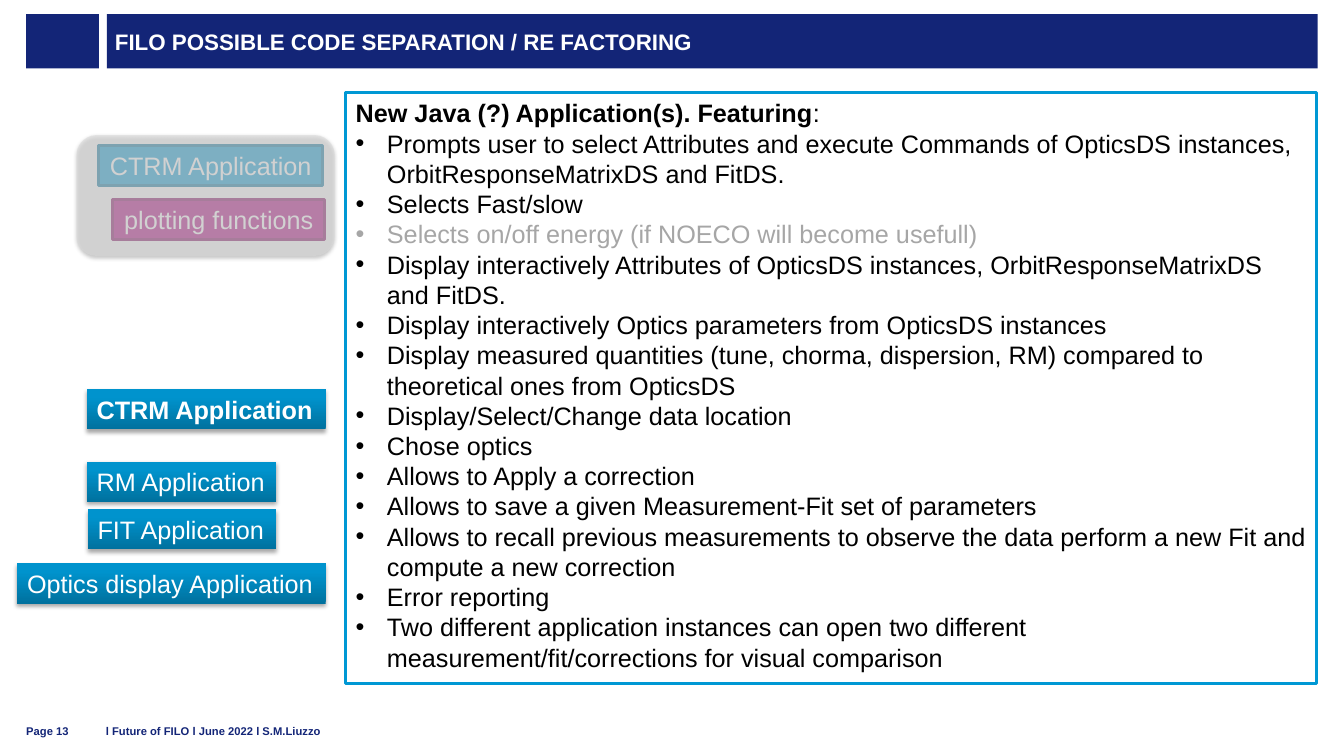
from pptx import Presentation
from pptx.dml.color import RGBColor
from pptx.enum import shapes, text
from pptx.oxml import parse_xml
from pptx.oxml.ns import nsdecls, qn
from pptx.util import Inches, Pt

NAVY, BLUE, WHITE, BLACK, GREY = "132577", "0098D4", "FFFFFF", "000000", "A6A6A6"
BUTTON_STOPS = [(0, "00719E"), (80, "0093CD"), (100, "0094CE")]

FEATURES = [
    "Prompts user to select Attributes and execute Commands of OpticsDS instances, "
    "OrbitResponseMatrixDS and FitDS.",
    "Selects Fast/slow",
    "Selects on/off energy (if NOECO will become usefull)",
    "Display interactively Attributes of OpticsDS instances, OrbitResponseMatrixDS and FitDS.",
    "Display interactively Optics parameters from OpticsDS instances",
    "Display measured quantities (tune, chorma, dispersion, RM) compared to "
    "theoretical ones from OpticsDS",
    "Display/Select/Change data location",
    "Chose optics",
    "Allows to Apply a correction",
    "Allows to save a given Measurement-Fit set of parameters",
    "Allows to recall previous measurements to observe the data perform a new Fit and "
    "compute a new correction",
    "Error reporting",
    "Two different application instances can open two different "
    "measurement/fit/corrections for visual comparison",
]
OPTIONAL_FEATURE = FEATURES[2]

APPLICATIONS = [
    ("CTRM Application", (0.86, 3.86, 2.37, 0.4), True),
    ("RM Application", (0.86, 4.58, 1.88, 0.4), False),
    ("FIT Application", (0.87, 5.05, 1.87, 0.4), False),
    ("Optics display Application", (0.17, 5.59, 3.06, 0.4), False),
]


def rgb(color):
    return RGBColor.from_string(color)


def set_font(paragraph, size, color, bold=None):
    font = paragraph.font
    font.name, font.size, font.bold = "Arial", Pt(size), bold
    font.color.rgb = rgb(color)


def add_box(slide, at, fill=None, line=None, kind=shapes.MSO_SHAPE.RECTANGLE):
    box = slide.shapes.add_shape(kind, *map(Inches, at))
    box.shadow.inherit = False
    if fill:
        box.fill.solid()
        box.fill.fore_color.rgb = rgb(fill)
    if line:
        box.line.color.rgb = rgb(line)
        box.line.width = Pt(2)
    else:
        box.line.fill.background()
    return box


def add_shadow(box, alpha, blur, distance):
    effects = box._element.spPr.find(qn("a:effectLst"))
    effects.append(parse_xml(
        f'<a:outerShdw {nsdecls("a")} blurRad="{Pt(blur)}" dist="{Pt(distance)}" '
        f'dir="5400000" rotWithShape="0"><a:srgbClr val="{BLACK}">'
        f'<a:alpha val="{alpha * 1000}"/></a:srgbClr></a:outerShdw>'))


def add_gradient(box):
    stops = "".join(f'<a:gs pos="{pos * 1000}"><a:srgbClr val="{color}"/></a:gs>'
                    for pos, color in BUTTON_STOPS)
    box._element.spPr.find(qn("a:prstGeom")).addnext(parse_xml(
        f'<a:gradFill {nsdecls("a")} rotWithShape="1"><a:gsLst>{stops}</a:gsLst>'
        '<a:lin ang="16200000" scaled="0"/></a:gradFill>'))


def write_label(box, label, align, bold=None):
    frame = box.text_frame
    frame.word_wrap = False
    frame.auto_size = text.MSO_AUTO_SIZE.SHAPE_TO_FIT_TEXT
    frame.vertical_anchor = text.MSO_ANCHOR.TOP
    paragraph = frame.paragraphs[0]
    paragraph.text = label
    paragraph.alignment = align
    set_font(paragraph, 18, WHITE, bold)


def add_application(slide, label, at, bold):
    button = add_box(slide, at)
    add_gradient(button)
    add_shadow(button, 35, 3.1, 1.8)
    write_label(button, label, text.PP_ALIGN.LEFT, bold)


def add_title(slide, title):
    add_box(slide, (0.26, 0.14, 0.72, 0.54), NAVY)
    bar = add_box(slide, (1.06, 0.14, 12.01, 0.54), NAVY)
    frame = bar.text_frame
    frame.margin_left = frame.margin_right = Inches(0.08)
    frame.margin_top = frame.margin_bottom = 0
    frame.vertical_anchor = text.MSO_ANCHOR.MIDDLE
    paragraph = frame.paragraphs[0]
    paragraph.text = title
    paragraph.alignment = text.PP_ALIGN.LEFT
    set_font(paragraph, 16, WHITE, True)


def add_footer(slide, words, left, width):
    footer = slide.shapes.add_textbox(*map(Inches, (left, 7.09, width, 0.23)))
    frame = footer.text_frame
    frame.word_wrap = True
    frame.margin_left = frame.margin_right = frame.margin_top = frame.margin_bottom = 0
    frame.vertical_anchor = text.MSO_ANCHOR.BOTTOM
    frame.paragraphs[0].text = words
    set_font(frame.paragraphs[0], 8, NAVY, True)


def add_bullet(paragraph):
    properties = paragraph._p.get_or_add_pPr()
    properties.set("marL", str(Inches(0.31)))
    properties.set("indent", str(-Inches(0.31)))
    properties.append(parse_xml(f'<a:buFont {nsdecls("a")} typeface="Arial"/>'))
    properties.append(parse_xml(f'<a:buChar {nsdecls("a")} char="•"/>'))


def add_features(slide):
    panel = add_box(slide, (3.43, 0.92, 9.63, 5.86), WHITE, BLUE)
    frame = panel.text_frame
    frame.word_wrap = True
    frame.auto_size = text.MSO_AUTO_SIZE.SHAPE_TO_FIT_TEXT
    frame.vertical_anchor = text.MSO_ANCHOR.TOP
    heading = frame.paragraphs[0]
    heading.alignment = text.PP_ALIGN.LEFT
    set_font(heading, 18, BLACK)
    for words, bold in (("New Java (?) Application(s). Featuring", True), (":", False)):
        run = heading.add_run()
        run.text = words
        run.font.bold = bold
    for feature in FEATURES:
        item = frame.add_paragraph()
        item.text = feature
        item.alignment = text.PP_ALIGN.LEFT
        add_bullet(item)
        set_font(item, 18, GREY if feature == OPTIONAL_FEATURE else BLACK)


def add_veil(slide):
    veil = add_box(slide, (0.76, 1.34, 2.56, 1.2), "D9D9D9",
                   kind=shapes.MSO_SHAPE.ROUNDED_RECTANGLE)
    color = veil._element.spPr.find(qn("a:solidFill"))[0]
    color.append(parse_xml(f'<a:alpha {nsdecls("a")} val="58000"/>'))
    add_shadow(veil, 38, 3.1, 1.6)


def main():
    deck = Presentation()
    deck.slide_width, deck.slide_height = Inches(13.33), Inches(7.5)
    slide = deck.slides.add_slide(deck.slide_layouts[6])

    # Title bar and footer
    add_title(slide, "FILO POSSIBLE CODE SEPARATION / RE FACTORING")
    add_footer(slide, "Page 13", 0.26, 0.6)
    add_footer(slide, "l Future of FILO l June 2022 l S.M.Liuzzo", 1.05, 8.92)

    # Present parts, greyed out by a veil
    current = add_box(slide, (0.98, 1.44, 2.22, 0.4), BLUE, "00709D")
    write_label(current, "CTRM Application", text.PP_ALIGN.CENTER)
    plotting = add_box(slide, (1.12, 1.98, 2.1, 0.4), "AF007C", "81005C")
    write_label(plotting, "plotting functions", text.PP_ALIGN.CENTER)
    add_veil(slide)

    # New applications and their features
    add_features(slide)
    for label, at, bold in APPLICATIONS:
        add_application(slide, label, at, bold)

    deck.save("out.pptx")


if __name__ == "__main__":
    main()
